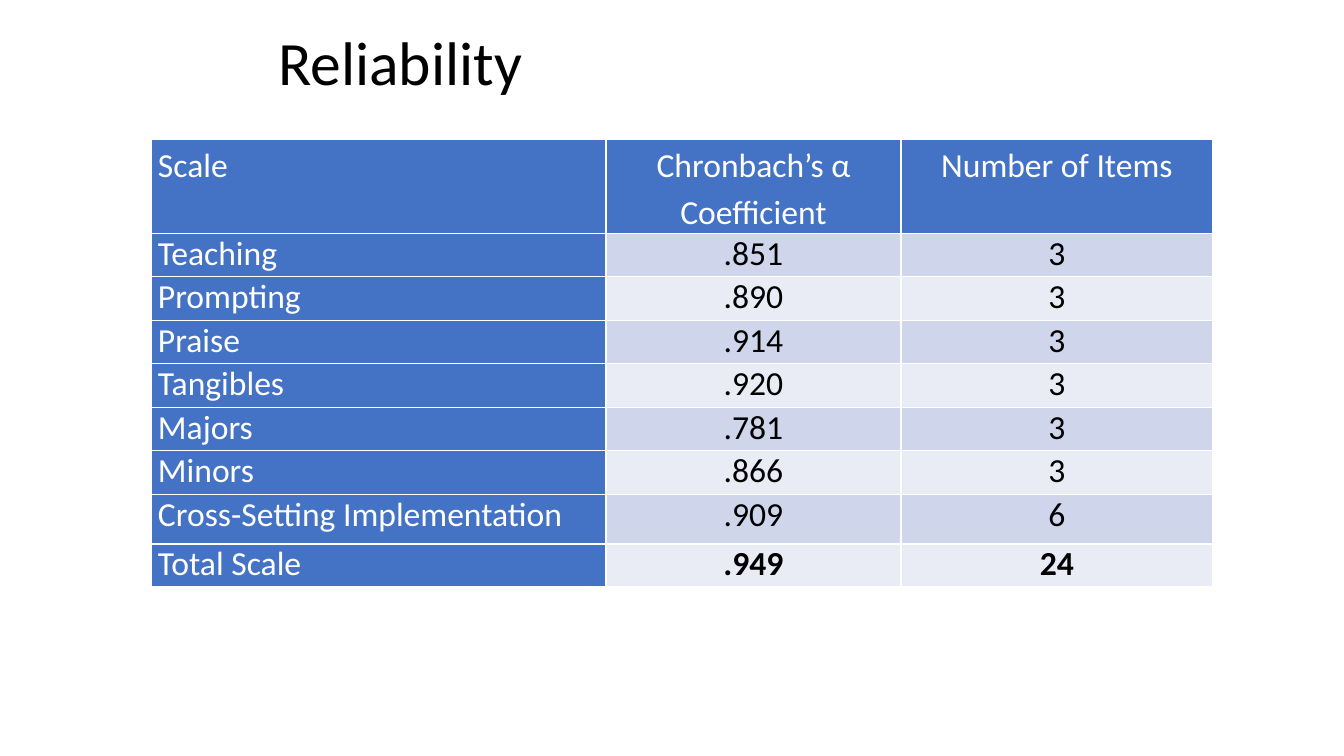
"""Build the Reliability slide with its table of scale coefficients."""
from lxml.etree import SubElement
from pptx import Presentation
from pptx.dml.color import RGBColor
from pptx.enum.text import MSO_ANCHOR, PP_ALIGN
from pptx.oxml.ns import qn
from pptx.util import Emu, Pt

EMU_PER_PX = 914400 / 100.8
WHITE = RGBColor(0xFF, 0xFF, 0xFF)
BLACK = RGBColor(0x00, 0x00, 0x00)
BLUE = RGBColor(0x44, 0x72, 0xC4)
BANDS = [RGBColor(0xE9, 0xEB, 0xF5), RGBColor(0xCF, 0xD5, 0xEA)]
FONT = "Calibri"
COLUMN_WIDTHS = [455, 295, 312]
ROW_HEIGHTS = [94, 43, 44, 43, 44, 43, 44, 50, 43]
ROWS = [
    ("Scale", "Chronbach’s α Coefficient", "Number of Items"),
    ("Teaching", ".851", "3"),
    ("Prompting", ".890", "3"),
    ("Praise", ".914", "3"),
    ("Tangibles", ".920", "3"),
    ("Majors", ".781", "3"),
    ("Minors", ".866", "3"),
    ("Cross-Setting Implementation", ".909", "6"),
    ("Total Scale", ".949", "24"),
]


def px(length):
    return Emu(round(length * EMU_PER_PX))


def add_run(paragraph, text, size, color, bold=False):
    run = paragraph.add_run()
    run.text = text
    run.font.name = FONT
    run.font.size = Pt(size)
    run.font.bold = bold
    run.font.color.rgb = color


presentation = Presentation()
presentation.slide_width = px(1344)
presentation.slide_height = px(756)
slide = presentation.slides.add_slide(presentation.slide_layouts[5])
slide.background.fill.solid()
slide.background.fill.fore_color.rgb = WHITE

title = slide.shapes.title
title.left, title.top, title.width, title.height = px(268), px(-7), px(1076), px(146)
title.text_frame.vertical_anchor = MSO_ANCHOR.MIDDLE
title_paragraph = title.text_frame.paragraphs[0]
title_paragraph.alignment = PP_ALIGN.LEFT
title_paragraph.line_spacing = 0.9
add_run(title_paragraph, "Reliability", 44, BLACK)

table = slide.shapes.add_table(
    len(ROWS), len(COLUMN_WIDTHS), px(151), px(139), px(sum(COLUMN_WIDTHS)), px(sum(ROW_HEIGHTS))
).table
for column, width in zip(table.columns, COLUMN_WIDTHS):
    column.width = px(width)
for row, height in zip(table.rows, ROW_HEIGHTS):
    row.height = px(height)

for row_index, texts in enumerate(ROWS):
    for column_index, text in enumerate(texts):
        cell = table.cell(row_index, column_index)
        is_heading = row_index == 0 or column_index == 0
        is_total = row_index == len(ROWS) - 1
        cell.margin_left = cell.margin_right = px(7)
        cell.margin_top = cell.margin_bottom = 0
        cell.vertical_anchor = MSO_ANCHOR.TOP

        paragraph = cell.text_frame.paragraphs[0]
        paragraph.alignment = PP_ALIGN.CENTER if column_index else PP_ALIGN.LEFT
        paragraph.line_spacing = 1.15 if row_index == 0 else 1.0
        add_run(paragraph, text, 24, WHITE if is_heading else BLACK, is_total and not is_heading)

        properties = cell._tc.get_or_add_tcPr()
        for side in ("a:lnL", "a:lnR", "a:lnT", "a:lnB"):
            border = SubElement(properties, qn(side), w=str(Pt(1)))
            border_fill = SubElement(border, qn("a:solidFill"))
            SubElement(border_fill, qn("a:srgbClr"), val=str(WHITE))
        cell.fill.solid()
        cell.fill.fore_color.rgb = BLUE if is_heading else BANDS[row_index % 2]

presentation.save("out.pptx")
